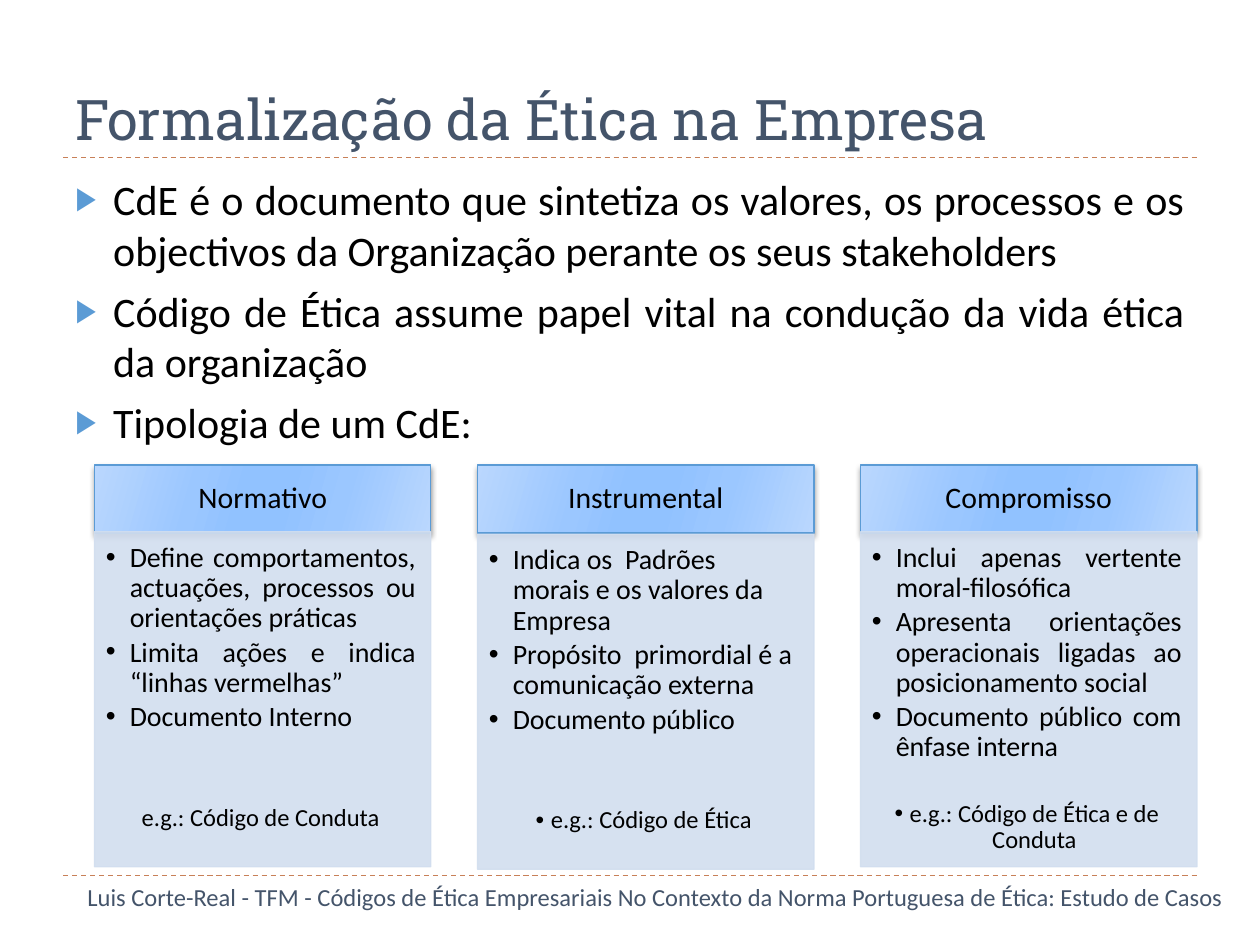
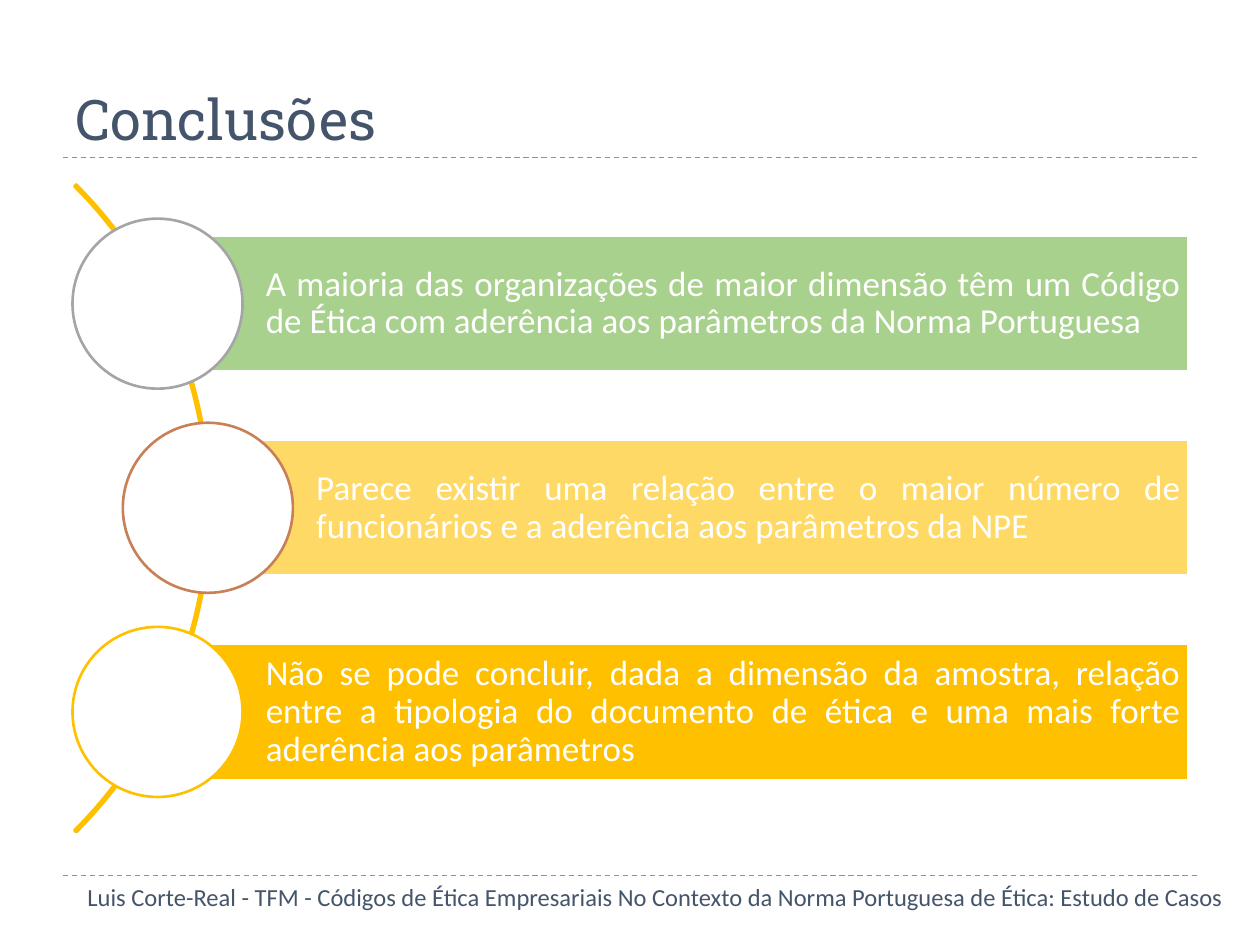
from pptx import Presentation, util as u
from pptx.dml import color
from pptx.enum import dml, shapes, text
from pptx.oxml import parse_xml, ns
from pptx.oxml.xmlchemy import OxmlElement

# Content
FOOT = ("Luis Corte-Real - TFM - Códigos de Ética Empresariais No Contexto "
        "da Norma Portuguesa de Ética: Estudo de Casos")
POINTS = [
    "CdE é o documento que sintetiza os valores, os processos e os "
    "objectivos da Organização perante os seus stakeholders",
    "Código de Ética assume papel vital na condução da vida ética da organização",
    "Tipologia de um CdE:",
]
# head, alignment, top, items, example, example bullet, gap before example
TYPES = [
    ("Normativo", "just", 4.22,
     ["Define comportamentos, actuações, processos ou orientações práticas",
      "Limita ações e indica “linhas vermelhas”",
      "Documento Interno"],
     "e.g.: Código de Conduta", None, 39),
    ("Instrumental", "left", 4.24,
     ["Indica os  Padrões morais e os valores da Empresa",
      "Propósito  primordial é a comunicação externa",
      "Documento público"],
     "e.g.: Código de Ética", "•", 39),
    ("Compromisso", "just", 4.22,
     ["Inclui apenas vertente moral-filosófica",
      "Apresenta orientações operacionais ligadas ao posicionamento social",
      "Documento público com ênfase interna"],
     "e.g.: Código de Ética e de Conduta", "•", 19.5),
]
# text, bar colour, ring colour, indent along the arc
ENDS = [
    ("A maioria das organizações de maior dimensão têm um Código de Ética "
     "com aderência aos parâmetros da Norma Portuguesa", "green", "gray", 0),
    ("Parece existir uma relação entre o maior número de funcionários e a "
     "aderência aos parâmetros da NPE", "sand", "rust", 0.4),
    ("Não se pode concluir, dada a dimensão da amostra, relação entre a "
     "tipologia do documento de ética e uma mais forte aderência aos "
     "parâmetros", "gold", "gold", 0),
]

# Style
HUES = {"ink": "44546A", "black": "000000", "white": "FFFFFF", "blue": "5B9BD5",
        "pale": "D2DEEF", "rust": "C88058", "green": "A9D18E", "sand": "FFD966",
        "gold": "FFC000", "gray": "A5A5A5"}
GLOSS = [(0, "BAD7FE"), (30, "9BC7FF"), (45, "91C2FF"),
         (55, "91C2FF"), (73, "9BC7FF"), (100, "BAD7FE")]
ALIGN = {"left": text.PP_ALIGN.LEFT, "just": text.PP_ALIGN.JUSTIFY,
         "mid": text.PP_ALIGN.CENTER, "right": text.PP_ALIGN.RIGHT}
KIND = shapes.MSO_SHAPE
MID, LOW = text.MSO_ANCHOR.MIDDLE, text.MSO_ANCHOR.BOTTOM


def hue(name):
    return color.RGBColor.from_string(HUES[name])


def node(tag, **attrs):
    item = OxmlElement(tag)
    for key, val in attrs.items():
        item.set(key, str(val))
    return item


def place(box):
    return [u.Inches(n) for n in box]


# Text
def frame(shape, inset=(0.1, 0.05, 0.1, 0.05), anchor=text.MSO_ANCHOR.TOP):
    tf = shape.text_frame
    tf.word_wrap = True
    tf.vertical_anchor = anchor
    (tf.margin_left, tf.margin_top,
     tf.margin_right, tf.margin_bottom) = place(inset)
    return tf


def write(tf, words, size, tint="black", align="left", font="Calibri",
          line=None, before=0, after=0, hang=0, mark=None, accent=None):
    para = tf.paragraphs[0]
    if para.runs:
        para = tf.add_paragraph()
    para.alignment = ALIGN[align]
    para.line_spacing = line
    para.space_before, para.space_after = u.Pt(before), u.Pt(after)
    run = para.add_run()
    run.text = words
    run.font.name, run.font.size = font, u.Pt(size)
    run.font.color.rgb = hue(tint)
    props = para._p.get_or_add_pPr()
    if hang:
        props.set("marL", str(u.Inches(hang)))
        props.set("indent", str(-u.Inches(hang)))
    if accent:
        tone = node("a:buClr")
        tone.append(node("a:srgbClr", val=HUES[accent]))
        props.append(tone)
        props.append(node("a:buSzPct", val=76000))
    if mark:
        props.append(node("a:buFont", typeface="Arial"))
        props.append(node("a:buChar", char=mark))
    else:
        props.append(node("a:buNone"))


def label(page, box, words, size, tint, anchor=text.MSO_ANCHOR.TOP, **kw):
    area = page.shapes.add_textbox(*place(box))
    write(frame(area, anchor=anchor), words, size, tint, **kw)


# Shapes
def solid(page, kind, box, fill, edge, width):
    shape = page.shapes.add_shape(kind, *place(box))
    shape.shadow.inherit = False
    shape.fill.solid()
    shape.fill.fore_color.rgb = hue(fill)
    shape.line.color.rgb = hue(edge)
    shape.line.width = u.Pt(width)
    return shape


def shine(shape):
    """Glossy gradient and a soft shadow below."""
    stops = "".join(f'<a:gs pos="{pos * 1000}"><a:srgbClr val="{tint}"/></a:gs>'
                    for pos, tint in GLOSS)
    grad = parse_xml(f'<a:gradFill {ns.nsdecls("a")} rotWithShape="1"><a:gsLst>'
                     f'{stops}</a:gsLst><a:lin ang="960000" scaled="0"/></a:gradFill>')
    props = shape._element.spPr
    props.replace(props.find(ns.qn("a:solidFill")), grad)
    shade = node("a:outerShdw", blurRad=u.Pt(3), dist=u.Pt(2),
                 dir=5400000, rotWithShape=0)
    tone = node("a:srgbClr", val=HUES["black"])
    tone.append(node("a:alpha", val=40000))
    shade.append(tone)
    props.find(ns.qn("a:effectLst")).append(shade)


def fade(shape):
    for tone in shape._element.spPr.iter(ns.qn("a:srgbClr")):
        tone.append(node("a:alpha", val=90000))


# Shared page: rules, title, footer
def start(deck, title):
    page = deck.slides.add_slide(deck.slide_layouts[6])
    for y in (6.95, 1.25):
        rule = page.shapes.add_connector(shapes.MSO_CONNECTOR.STRAIGHT,
                                         *place((0.5, y, 9.5, y)))
        rule.line.color.rgb = hue("rust")
        rule.line.width = u.Pt(0.75)
        rule.line.dash_style = dml.MSO_LINE.DASH
        rule._element.spPr.append(node("a:effectLst"))
    label(page, (0.5, 0.17, 9, 1.08), title, 32, "ink", LOW, font="Roboto Slab")
    label(page, (0.12, 6.95, 9.69, 0.34), FOOT, 14, "ink", align="right")
    return page


def ethics(deck):
    page = start(deck, "Formalização da Ética na Empresa")
    tf = frame(page.shapes.add_textbox(*place((0.5, 1.33, 9, 2.3))))
    for words in POINTS:
        write(tf, words, 24, align="just", before=6, hang=0.3,
              mark="▶", accent="blue")
    # Three columns
    wide, step = 2.67, 3.04
    for i, (head, align, top, items, case, mark, gap) in enumerate(TYPES):
        x = 0.75 + i * step
        cap = solid(page, KIND.RECTANGLE, (x, 3.69, wide, 0.54),
                    "blue", "blue", 0.75)
        shine(cap)
        write(frame(cap, (0.13, 0.08, 0.13, 0.08), MID), head, 17,
              align="mid", line=0.9)
        card = solid(page, KIND.RECTANGLE, (x, top, wide, 2.66),
                     "pale", "pale", 0.75)
        fade(card)
        tf = frame(card, (0.09, 0.09, 0.12, 0.14))
        for words in items:
            write(tf, words, 16, align=align, line=0.9, after=2.4,
                  hang=0.19, mark="•")
        write(tf, case, 14, align="mid", line=0.9, before=gap,
              hang=0.12, mark=mark)


def closing(deck):
    page = start(deck, "Conclusões")
    arc = solid(page, KIND.BLOCK_ARC, (-5.6, 0.4, 7.27, 7.27),
                "gold", "gold", 1.5)
    for i, val in enumerate((189, 27, 0.003)):
        arc.adjustments[i] = val
    # Bars with a disc at the left end
    tall, disc, edge = 1.08, 1.35, 9.43
    for i, (words, fill, ring, shift) in enumerate(ENDS):
        x, y = 1.25 + shift, 1.87 + i * 1.62
        bar = solid(page, KIND.RECTANGLE, (x, y, edge - x, tall),
                    fill, "white", 1.5)
        write(frame(bar, (0.86, 0.06, 0.06, 0.06), MID), words, 20, "white",
              align="just", line=0.9)
        solid(page, KIND.OVAL, (x - disc / 2, y + (tall - disc) / 2, disc, disc),
              "white", ring, 1.5)


def main():
    deck = Presentation()
    deck.slide_width, deck.slide_height = u.Inches(10), u.Inches(7.5)
    ethics(deck)
    closing(deck)
    deck.save("out.pptx")


if __name__ == "__main__":
    main()
